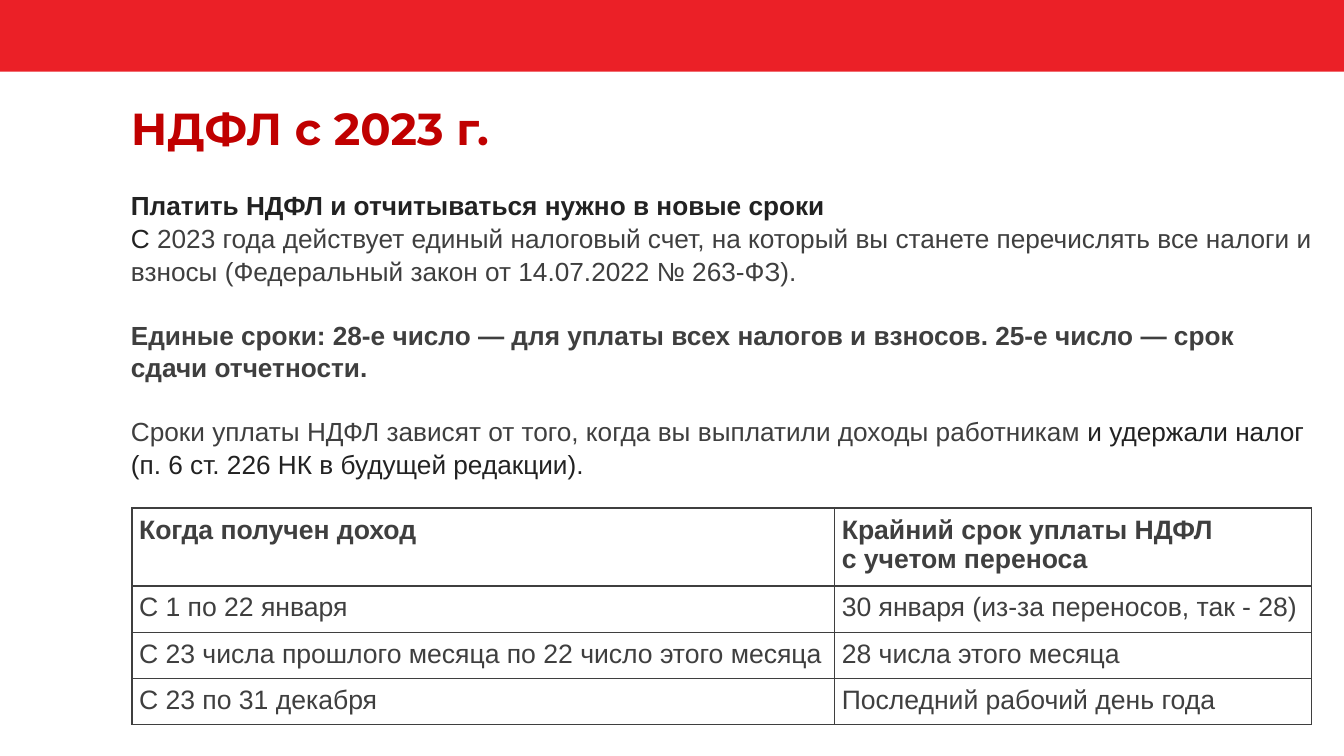
"""Build a slide on the 2023 personal income tax deadlines."""
from dataclasses import dataclass

from lxml import etree
from pptx import Presentation
from pptx import util as u
from pptx.dml.color import RGBColor
from pptx.enum import shapes, text
from pptx.oxml.ns import qn

COLORS = {"band": "EB2027", "title": "C00000", "dark": "222222",
          "gray": "3F3F3F", "white": "FFFFFF"}
BODY_LINE = 1.04
BODY_GAP = u.Pt(22.4)


@dataclass(frozen=True)
class Span:
    words: str
    color: str = "gray"
    bold: bool = False
    size: float = 18.7
    face: str = "Arial"


@dataclass(frozen=True)
class Block:
    spans: tuple[Span, ...]
    line_spacing: float = 1.0
    space_after: int = 0


TITLE = [Block((Span("НДФЛ с 2023 г.", "title", True, 32, "Montserrat"),), 0.9)]
BODY = [
    Block((Span("Платить НДФЛ и отчитываться нужно в новые сроки", "dark", True),),
          BODY_LINE),
    Block((Span("С ", "dark"),
           Span("2023 года действует единый налоговый счет, на который вы станете "
                "перечислять все налоги и взносы (Федеральный закон от 14.07.2022 "
                "№ 263-ФЗ).")), BODY_LINE, BODY_GAP),
    Block((Span("Единые сроки: 28-е число — для уплаты всех налогов и взносов. "
                "25-е число — срок сдачи отчетности.", bold=True),),
          BODY_LINE, BODY_GAP),
    Block((Span("Сроки уплаты НДФЛ зависят от того, когда вы выплатили доходы "
                "работникам "),
           Span("и удержали налог (п. 6 ст. 226 НК в будущей редакции).", "dark")),
          BODY_LINE),
]
COLUMN_WIDTHS = (6.97, 4.73)
ROW_HEIGHTS = (0.77, 0.46, 0.46, 0.45)
DEADLINES = (
    (("Когда получен доход",), ("Крайний срок уплаты НДФЛ", "с учетом переноса")),
    (("С 1 по 22 января",), ("30 января (из-за переносов, так - 28)",)),
    (("С 23 числа прошлого месяца по 22 число этого месяца",),
     ("28 числа этого месяца",)),
    (("С 23 по 31 декабря",), ("Последний рабочий день года",)),
)


def rgb(name: str) -> RGBColor:
    return RGBColor.from_string(COLORS[name])


def apply_format(target, values: dict) -> None:
    for name, value in values.items():
        setattr(target, name, value)


def write_blocks(frame, blocks: list[Block]) -> None:
    for index, block in enumerate(blocks):
        para = frame.add_paragraph() if index else frame.paragraphs[0]
        apply_format(para, {"line_spacing": block.line_spacing,
                            "space_after": block.space_after})
        for item in block.spans:
            span = para.add_run()
            span.text = item.words
            apply_format(span.font, {"name": item.face, "size": u.Pt(item.size),
                                     "bold": item.bold})
            span.font.color.rgb = rgb(item.color)


def add_text(page, bounds: tuple[float, ...], blocks: list[Block]) -> None:
    box = page.shapes.add_textbox(*map(u.Inches, bounds))
    apply_format(box.text_frame, {"word_wrap": True,
                                  "vertical_anchor": text.MSO_ANCHOR.TOP})
    write_blocks(box.text_frame, blocks)


def add_band(page, width: int) -> None:
    band = page.shapes.add_shape(shapes.MSO_SHAPE.RECTANGLE, 0, 0, width,
                                 u.Inches(0.71))
    band.shadow.inherit = False
    band.fill.solid()
    band.fill.fore_color.rgb = rgb("band")
    band.line.fill.background()


def add_borders(cell) -> None:
    properties = cell._tc.get_or_add_tcPr()
    for index, side in enumerate(("lnL", "lnR", "lnT", "lnB")):
        line = etree.Element(qn(f"a:{side}"), w=str(u.Pt(1)))
        fill = etree.SubElement(line, qn("a:solidFill"))
        etree.SubElement(fill, qn("a:srgbClr"), val=COLORS["gray"])
        properties.insert(index, line)


def add_deadlines(page) -> None:
    table = page.shapes.add_table(
        len(ROW_HEIGHTS), len(COLUMN_WIDTHS), u.Inches(1.31), u.Inches(5.04),
        u.Inches(sum(COLUMN_WIDTHS)), u.Inches(sum(ROW_HEIGHTS))).table
    apply_format(table, {"first_row": False, "horz_banding": False})
    for column, width in zip(table.columns, COLUMN_WIDTHS):
        column.width = u.Inches(width)
    margins = dict.fromkeys(
        ("margin_left", "margin_right", "margin_top", "margin_bottom"),
        u.Inches(0.07))
    for row_index, (entries, height) in enumerate(zip(DEADLINES, ROW_HEIGHTS)):
        table.rows[row_index].height = u.Inches(height)
        for cell, lines in zip(table.rows[row_index].cells, entries):
            apply_format(cell, margins)
            cell.fill.solid()
            cell.fill.fore_color.rgb = rgb("white")
            add_borders(cell)
            write_blocks(cell.text_frame, [
                Block((Span(line, bold=row_index == 0, size=19),)) for line in lines])


def main() -> None:
    deck = Presentation()
    apply_format(deck, {"slide_width": u.Inches(13.33),
                        "slide_height": u.Inches(7.5)})
    page = deck.slides.add_slide(deck.slide_layouts[6])
    add_band(page, deck.slide_width)
    add_text(page, (1.2, 1.01, 11.5, 1.45), TITLE)
    add_text(page, (1.2, 1.82, 11.95, 4.19), BODY)
    add_deadlines(page)
    deck.save("out.pptx")


if __name__ == "__main__":
    main()
